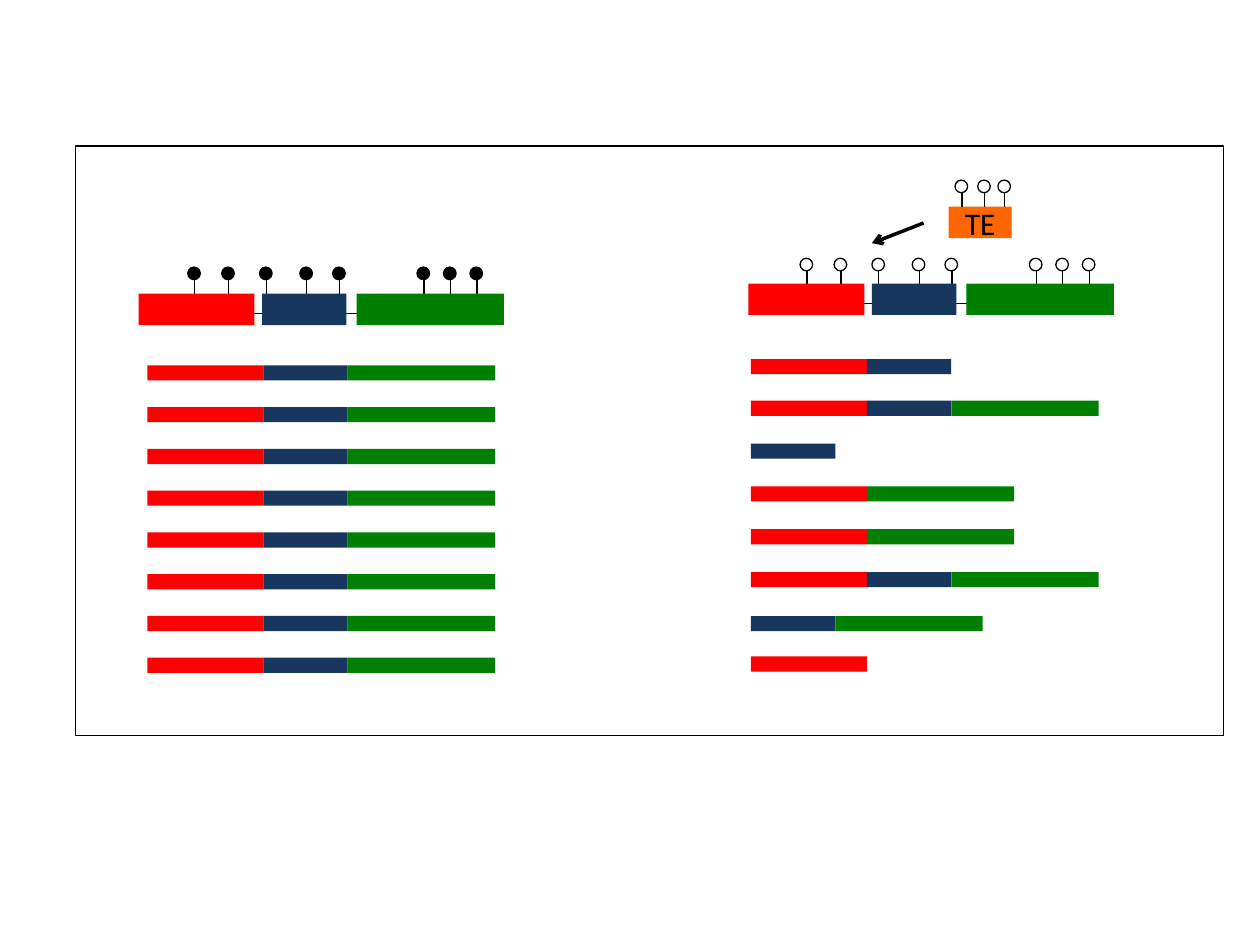
from lxml import etree
from pptx import Presentation
from pptx.dml.color import RGBColor
from pptx.enum.shapes import MSO_CONNECTOR, MSO_SHAPE
from pptx.enum.text import MSO_ANCHOR, PP_ALIGN
from pptx.oxml.ns import qn
from pptx.util import Inches, Pt

RECT, OVAL = MSO_SHAPE.RECTANGLE, MSO_SHAPE.OVAL
STRAIGHT = MSO_CONNECTOR.STRAIGHT
MIDDLE, CENTER = MSO_ANCHOR.MIDDLE, PP_ALIGN.CENTER

BLACK = RGBColor(0x00, 0x00, 0x00)
RED = RGBColor(0xFF, 0x00, 0x00)
BLUE = RGBColor(0x17, 0x37, 0x5E)
GREEN = RGBColor(0x00, 0x80, 0x00)
ORANGE = RGBColor(0xFF, 0x66, 0x00)

# Exon letter: colour and length in inches
EXONS = {"R": (RED, 0.92), "B": (BLUE, 0.67), "G": (GREEN, 1.17)}
GENE_OFFSETS = {"B": 0.98, "R": 0, "G": 1.73}
GENE_PINS = [0, 0.27, 0.57, 0.89, 1.15, 1.82, 2.03, 2.24]
TE_PINS = [0, 0.18, 0.34]
GENE_HEIGHT, TRANSCRIPT_HEIGHT, PIN_SIZE = 0.25, 0.12, 0.1

FIRST_TOP, LAST_TOP, ROWS = 2.9, 5.22, 8
PITCH = (LAST_TOP - FIRST_TOP) / (ROWS - 1)
METHYLATED = [(FIRST_TOP + i * PITCH, "RBG") for i in range(ROWS)]
UNMETHYLATED = [(2.85, "RB"), (3.18, "RBG"), (3.52, "B"), (3.86, "RG"),
                (4.2, "RG"), (4.54, "RBG"), (4.89, "BG"), (5.21, "R")]


def add_box(shapes, kind, x, y, w, h, fill=None, line=None):
    s = shapes.add_shape(kind, Inches(x), Inches(y), Inches(w), Inches(h))
    s.shadow.inherit = False
    if fill is None:
        s.fill.background()
    else:
        s.fill.solid()
        s.fill.fore_color.rgb = fill
    if line is None:
        s.line.fill.background()
    else:
        s.line.color.rgb = line
        s.line.width = Pt(0.75)
    return s


def add_line(shapes, x1, y1, x2, y2, width=0.75, arrow=False):
    c = shapes.add_connector(STRAIGHT, Inches(x1), Inches(y1), Inches(x2), Inches(y2))
    c.line.color.rgb = BLACK
    c.line.width = Pt(width)
    sp_pr = c._element.spPr
    if arrow:
        etree.SubElement(sp_pr.find(qn("a:ln")), qn("a:tailEnd"), type="arrow")
    etree.SubElement(sp_pr, qn("a:effectLst"))


def add_pins(shapes, x, y, offsets, fill=None):
    """Row of methylation marks: a circle on a stem."""
    for dx in offsets:
        add_box(shapes, OVAL, x + dx, y, PIN_SIZE, PIN_SIZE, fill, BLACK)
        stem = x + dx + 0.055
        add_line(shapes, stem, y + PIN_SIZE, stem, y + 0.21)


def add_gene(shapes, x, y):
    """Three exons on an intron line."""
    add_line(shapes, x + 2.55, y + 0.16, x + 0.11, y + 0.16)
    for exon, dx in GENE_OFFSETS.items():
        color, length = EXONS[exon]
        add_box(shapes, RECT, x + dx, y, length, GENE_HEIGHT, color)


def add_transcripts(shapes, x, transcripts):
    for top, exons in transcripts:
        left = x
        for exon in exons:
            color, length = EXONS[exon]
            add_box(shapes, RECT, left, top, length, TRANSCRIPT_HEIGHT, color)
            left += length


def add_transposon(shapes, x, y):
    """TE box with its marks and the arrow towards the gene."""
    s = add_box(shapes, RECT, x, y, 0.5, GENE_HEIGHT, ORANGE)
    tf = s.text_frame
    settings = {"margin_left": 0, "margin_right": 0, "margin_top": 0,
                "margin_bottom": 0, "word_wrap": False, "vertical_anchor": MIDDLE}
    for name, value in settings.items():
        setattr(tf, name, value)
    p = tf.paragraphs[0]
    p.alignment = CENTER
    r = p.add_run()
    r.text = "TE"
    for name, value in {"name": "Calibri", "size": Pt(18)}.items():
        setattr(r.font, name, value)
    r.font.color.rgb = BLACK
    add_line(shapes, x - 0.2, y + 0.13, x - 0.61, y + 0.29, 2, arrow=True)
    add_pins(shapes, x + 0.05, y - 0.21, TE_PINS)


def main():
    prs = Presentation()
    prs.slide_width, prs.slide_height = Inches(10), Inches(7.5)
    shapes = prs.slides.add_slide(prs.slide_layouts[6]).shapes

    # Frame
    add_box(shapes, RECT, 0.6, 1.16, 9.11, 4.68, line=BLACK)

    # Methylated gene: uniform transcripts
    left = shapes.add_group_shape().shapes
    add_pins(left, 1.49, 2.12, GENE_PINS, BLACK)
    add_gene(left, 1.1, 2.33)
    add_transcripts(left, 1.17, METHYLATED)

    # Unmethylated gene with inserted transposon: varied transcripts
    add_transposon(shapes.add_group_shape().shapes, 7.53, 1.64)
    add_pins(shapes.add_group_shape().shapes, 6.35, 2.05, GENE_PINS)
    add_gene(shapes, 5.94, 2.25)
    add_transcripts(shapes, 5.96, UNMETHYLATED)

    prs.save("out.pptx")


if __name__ == "__main__":
    main()
